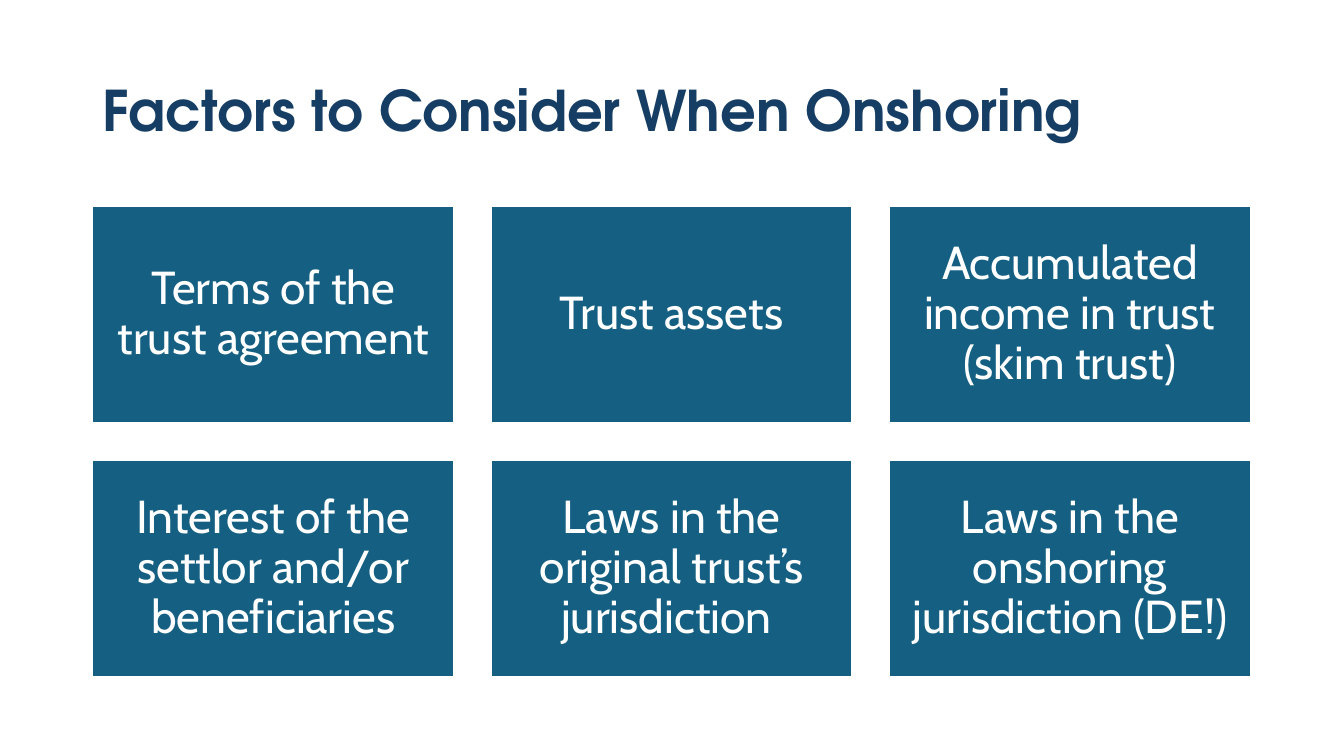
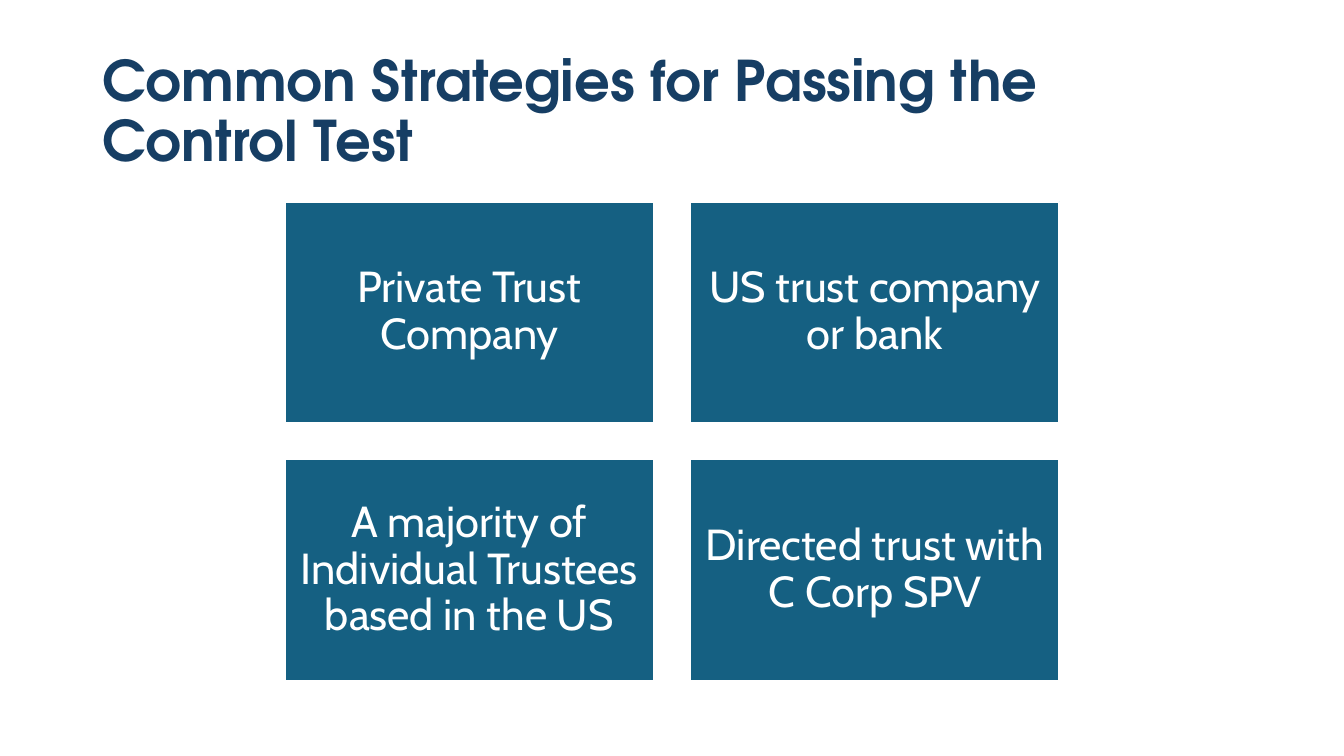
from dataclasses import dataclass

from pptx import Presentation
from pptx.dml.color import RGBColor as Rgb
from pptx.enum.shapes import MSO_SHAPE as Form
from pptx.enum.text import MSO_ANCHOR as Anchor, PP_ALIGN as Align
from pptx.slide import Slide
from pptx.text.text import TextFrame as Frame
from pptx.util import Pt

HUES = {"navy": "163E64", "teal": "156082", "white": "FFFFFF"}


@dataclass(frozen=True)
class Style:
    font: str
    size: float
    hue: str
    bold: bool
    align: Align


@dataclass(frozen=True)
class Grid:
    left: float
    top: float
    width: float
    height: float
    gap: float
    cols: int
    inset: float
    size: float


@dataclass(frozen=True)
class Page:
    title: str
    grid: Grid
    cards: tuple[str, ...]


HEAD = Style("TeX Gyre Adventor", 40, "navy", True, Align.LEFT)

PAGES = (
    Page(
        "Factors to Consider When Onshoring",
        Grid(66, 147, 258.5, 155.3, 26, 3, 10, 33),
        (
            "Terms of the trust agreement",
            "Trust assets",
            "Accumulated income in trust (skim trust)",
            "Interest of the settlor and/or beneficiaries",
            "Laws in the original trust’s jurisdiction ",
            "Laws in the onshoring jurisdiction (DE!)",
        ),
    ),
    Page(
        "Common Strategies for Passing the Control Test",
        Grid(203.5, 144, 263.5, 158, 26.2, 2, 9.3, 31),
        (
            "Private Trust Company",
            "US trust company or bank",
            "A majority of Individual Trustees based in the US",
            "Directed trust with C Corp SPV",
        ),
    ),
)


def tint(hue: str) -> Rgb:
    return Rgb.from_string(HUES[hue])


def write(frame: Frame, text: str, style: Style, side: float, end: float) -> None:
    form = {
        "word_wrap": True,
        "vertical_anchor": Anchor.MIDDLE,
        "margin_left": Pt(side),
        "margin_right": Pt(side),
        "margin_top": Pt(end),
        "margin_bottom": Pt(end),
    }
    for key, value in form.items():
        setattr(frame, key, value)
    para = frame.paragraphs[0]
    para.alignment = style.align
    para.line_spacing = 0.9
    run = para.add_run()
    run.text = text
    face = {"name": style.font, "size": Pt(style.size), "bold": style.bold}
    for key, value in face.items():
        setattr(run.font, key, value)
    run.font.color.rgb = tint(style.hue)


def draw_title(slide: Slide, text: str) -> None:
    box = slide.shapes.add_textbox(Pt(66), Pt(28.8), Pt(828), Pt(104.4))
    write(box.text_frame, text, HEAD, 7.2, 3.6)


def draw_cards(slide: Slide, grid: Grid, cards: tuple[str, ...]) -> None:
    style = Style("Cabin", grid.size, "white", False, Align.CENTER)
    for index, text in enumerate(cards):
        row, col = divmod(index, grid.cols)
        left = grid.left + col * (grid.width + grid.gap)
        top = grid.top + row * (grid.height + grid.gap)
        card = slide.shapes.add_shape(
            Form.RECTANGLE, Pt(left), Pt(top), Pt(grid.width), Pt(grid.height)
        )
        card.shadow.inherit = False
        card.fill.solid()
        card.fill.fore_color.rgb = tint("teal")
        card.line.color.rgb = tint("white")
        card.line.width = Pt(1.5)
        write(card.text_frame, text, style, grid.inset, grid.inset)


def main() -> None:
    deck = Presentation()
    deck.slide_width, deck.slide_height = Pt(960), Pt(540)
    for page in PAGES:
        slide = deck.slides.add_slide(deck.slide_layouts[6])
        draw_title(slide, page.title)
        draw_cards(slide, page.grid, page.cards)
    deck.save("out.pptx")


if __name__ == "__main__":
    main()
